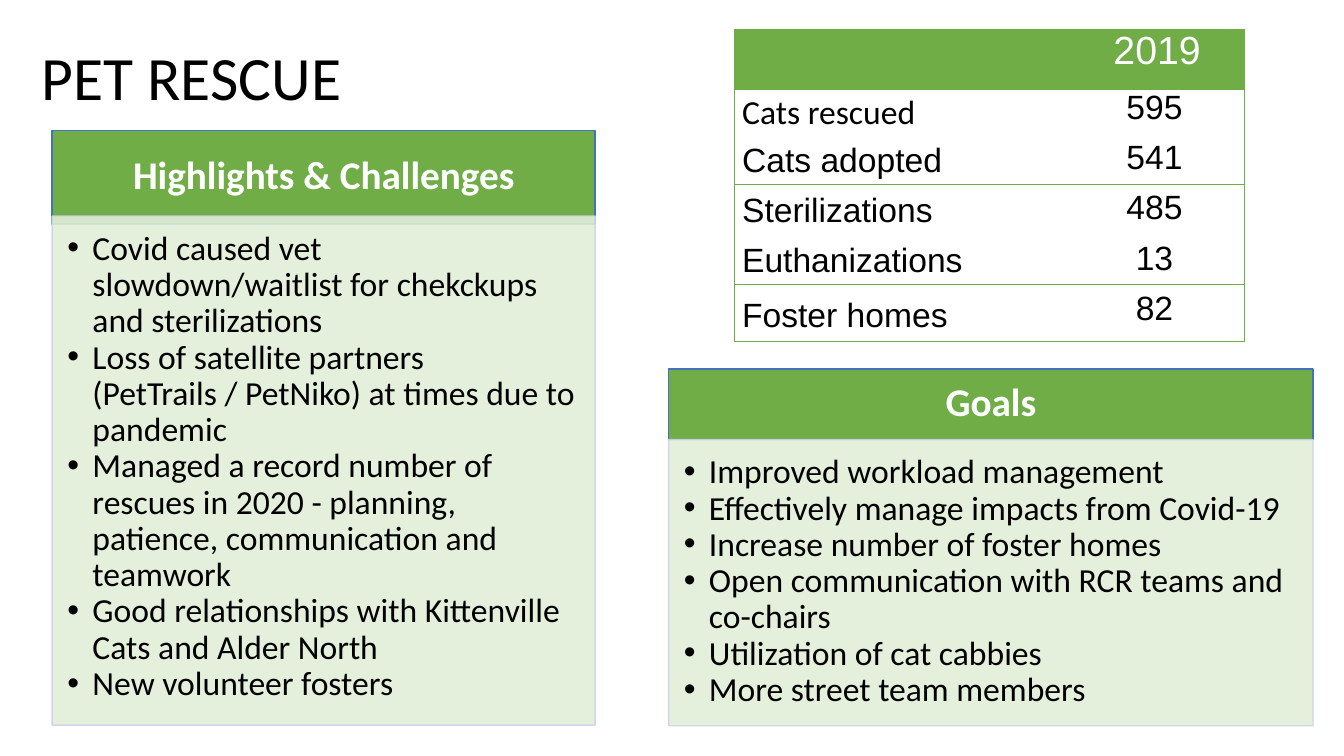
from dataclasses import dataclass

from lxml import etree
from pptx import Presentation
from pptx.dml.color import RGBColor
from pptx.enum.shapes import MSO_SHAPE
from pptx.enum.text import MSO_ANCHOR, MSO_AUTO_SIZE, PP_ALIGN
from pptx.oxml.ns import qn
from pptx.util import Emu, Inches, Pt

RECTANGLE = MSO_SHAPE.RECTANGLE
TOP, MIDDLE = MSO_ANCHOR.TOP, MSO_ANCHOR.MIDDLE
LEFT, CENTER = PP_ALIGN.LEFT, PP_ALIGN.CENTER
NO_AUTOFIT = MSO_AUTO_SIZE.NONE
TWO_CONTENT_LAYOUT = 3
SLIDE_WIDTH, SLIDE_HEIGHT = Inches(13.33), Inches(7.5)


@dataclass(frozen=True)
class Theme:
    green: str = "70AD47"
    pale_green: str = "E1EFD8"
    header_line: str = "4372C3"
    body_line: str = "CCD3EA"
    black: str = "000000"
    white: str = "FFFFFF"
    main_font: str = "Calibri"
    table_font: str = "Arial"
    title_size: int = 44
    heading_size: int = 28
    text_size: int = 24
    body_opacity: int = 89
    tight: float = 0.9
    loose: float = 1.07
    border: float = 0.75


@dataclass(frozen=True)
class Box:
    """Left, top, width and height in percent of the slide."""
    left: float
    top: float
    width: float
    height: float


@dataclass(frozen=True)
class Panel:
    heading: str
    header_box: Box
    body_box: Box
    bullets: tuple[str, ...]


@dataclass(frozen=True)
class CountRow:
    label: str
    count: str
    height: float
    font: str = "Arial"
    inset: float = 0.05
    label_inset: float = 0.05
    rule_below: bool = False


THEME = Theme()
TITLE_BOX = Box(2.35, 0.95, 86.25, 19.35)

PANELS = (
    Panel("Highlights & Challenges", Box(3.88, 17.25, 40.4, 12.4), Box(3.88, 28.58, 40.4, 67.35), (
        "Covid caused vet slowdown/waitlist for chekckups and sterilizations",
        "Loss of satellite partners (PetTrails / PetNiko) at times due to pandemic",
        "Managed a record number of rescues in 2020 - planning, patience, communication and teamwork",
        "Good relationships with Kittenville Cats and Alder North",
        "New volunteer fosters",
    )),
    Panel("Goals", Box(49.75, 48.8, 47.95, 9.35), Box(49.75, 58.15, 47.95, 37.85), (
        "Improved workload management",
        "Effectively manage impacts from Covid-19",
        "Increase number of foster homes",
        "Open communication with RCR teams and co-chairs",
        "Utilization of cat cabbies",
        "More street team members",
    )),
)

TABLE_LEFT, TABLE_TOP = 54.62, 3.85
TABLE_COLUMNS = (24.53, 13.43)
COUNT_ROWS = (
    CountRow("", "2019", 8, inset=0, rule_below=True),
    CountRow("Cats rescued", "595", 5.9, font=THEME.main_font, inset=0, label_inset=0),
    CountRow("Cats adopted", "541", 6.65, rule_below=True),
    CountRow("Sterilizations", "485", 6.65),
    CountRow("Euthanizations", "13", 6.65, rule_below=True),
    CountRow("Foster homes", "82", 7.53, label_inset=0.1, rule_below=True),
)


def across(percent: float) -> Emu:
    return Emu(round(SLIDE_WIDTH * percent / 100))


def down(percent: float) -> Emu:
    return Emu(round(SLIDE_HEIGHT * percent / 100))


def place(shape, box: Box) -> None:
    shape.left, shape.top = across(box.left), down(box.top)
    shape.width, shape.height = across(box.width), down(box.height)


def set_frame(frame, anchor, insets: tuple[float, float, float, float]) -> None:
    frame.word_wrap, frame.auto_size, frame.vertical_anchor = True, NO_AUTOFIT, anchor
    (frame.margin_left, frame.margin_top,
     frame.margin_right, frame.margin_bottom) = map(Inches, insets)


def write(paragraph, text: str, size: float, color: str, font: str = THEME.main_font,
          bold: bool = False, align=LEFT, spacing: float = 1.0) -> None:
    paragraph.alignment, paragraph.line_spacing = align, spacing
    paragraph.space_before = paragraph.space_after = Pt(0)
    run = paragraph.add_run()
    run.text = text
    run.font.name, run.font.size, run.font.bold = font, Pt(size), bold
    run.font.color.rgb = RGBColor.from_string(color)


def paint(shape, fill: str, line: str, opacity: int = 100) -> None:
    shape.fill.solid()
    shape.fill.fore_color.rgb = RGBColor.from_string(fill)
    shape.line.color.rgb = RGBColor.from_string(line)
    shape.line.width = Pt(1)
    if opacity < 100:
        for color in shape.element.spPr.iter(qn("a:srgbClr")):
            etree.SubElement(color, qn("a:alpha"), val=str(opacity * 1000))


def add_bullet(paragraph) -> None:
    paragraph.level = 1
    properties = paragraph._p.get_or_add_pPr()
    properties.set("marL", str(Inches(0.25)))
    properties.set("indent", str(-Inches(0.25)))
    bullet_color = etree.SubElement(properties, qn("a:buClr"))
    etree.SubElement(bullet_color, qn("a:srgbClr"), val=THEME.black)
    etree.SubElement(properties, qn("a:buFont"), typeface="Arial")
    etree.SubElement(properties, qn("a:buChar"), char="•")


def draw_panel(slide, panel: Panel, body) -> None:
    # Bullet list
    place(body, panel.body_box)
    paint(body, THEME.pale_green, THEME.body_line, THEME.body_opacity)
    frame = body.text_frame
    set_frame(frame, TOP, (0.15, 0.15, 0.2, 0.23))
    for index, text in enumerate(panel.bullets):
        paragraph = frame.add_paragraph() if index else frame.paragraphs[0]
        add_bullet(paragraph)
        write(paragraph, text, THEME.text_size, THEME.black, spacing=THEME.tight)
    # Heading bar, placed behind the translucent list
    header = slide.shapes.add_shape(RECTANGLE, 0, 0, 0, 0)
    place(header, panel.header_box)
    header.shadow.inherit = False
    paint(header, THEME.green, THEME.header_line)
    set_frame(header.text_frame, MIDDLE, (0.2, 0.12, 0.2, 0.12))
    write(header.text_frame.paragraphs[0], panel.heading, THEME.heading_size, THEME.white,
          bold=True, align=CENTER, spacing=THEME.tight)
    body.element.addprevious(header.element)


def set_borders(cell, visible: dict[str, bool]) -> None:
    properties = cell._tc.get_or_add_tcPr()
    for side in "LRTB":
        line = etree.SubElement(properties, qn(f"a:ln{side}"), w=str(Pt(THEME.border)))
        if visible[side]:
            fill = etree.SubElement(line, qn("a:solidFill"))
            etree.SubElement(fill, qn("a:srgbClr"), val=THEME.green)
        else:
            etree.SubElement(line, qn("a:noFill"))


def draw_table(slide) -> None:
    table = slide.shapes.add_table(
        len(COUNT_ROWS), len(TABLE_COLUMNS), across(TABLE_LEFT), down(TABLE_TOP),
        across(sum(TABLE_COLUMNS)), down(sum(row.height for row in COUNT_ROWS))).table
    table.first_row = table.horz_banding = False
    for column, width in zip(table.columns, TABLE_COLUMNS):
        column.width = across(width)
    for index, row in enumerate(COUNT_ROWS):
        table.rows[index].height = down(row.height)
        is_header = index == 0
        rule_above = is_header or COUNT_ROWS[index - 1].rule_below
        for side, text in enumerate((row.label, row.count)):
            is_label = side == 0
            cell = table.cell(index, side)
            set_borders(cell, {"L": is_label, "R": not is_label,
                               "T": rule_above, "B": row.rule_below})
            if is_header:
                cell.fill.solid()
                cell.fill.fore_color.rgb = RGBColor.from_string(THEME.green)
            else:
                cell.fill.background()
            cell.vertical_anchor = TOP
            cell.margin_left = Inches(0.13 if is_header else 0.08)
            cell.margin_right = Inches(0.07)
            cell.margin_top = Inches(row.label_inset if is_label else row.inset)
            cell.margin_bottom = Inches(row.inset)
            if text:
                write(cell.text_frame.paragraphs[0], text,
                      THEME.heading_size if is_header else THEME.text_size,
                      THEME.white if is_header else THEME.black,
                      font=row.font if is_label else THEME.table_font,
                      align=LEFT if is_label else CENTER,
                      spacing=THEME.loose if is_label else 1.0)


def main() -> None:
    presentation = Presentation()
    presentation.slide_width, presentation.slide_height = SLIDE_WIDTH, SLIDE_HEIGHT
    slide = presentation.slides.add_slide(presentation.slide_layouts[TWO_CONTENT_LAYOUT])
    # Title
    title = slide.shapes.title
    place(title, TITLE_BOX)
    set_frame(title.text_frame, MIDDLE, (0.1, 0.05, 0.1, 0.05))
    write(title.text_frame.paragraphs[0], "PET RESCUE", THEME.title_size, THEME.black,
          spacing=THEME.tight)
    # Panels and yearly counts
    for number, panel in enumerate(PANELS, start=1):
        draw_panel(slide, panel, slide.placeholders[number])
    draw_table(slide)
    presentation.save("out.pptx")


if __name__ == "__main__":
    main()
